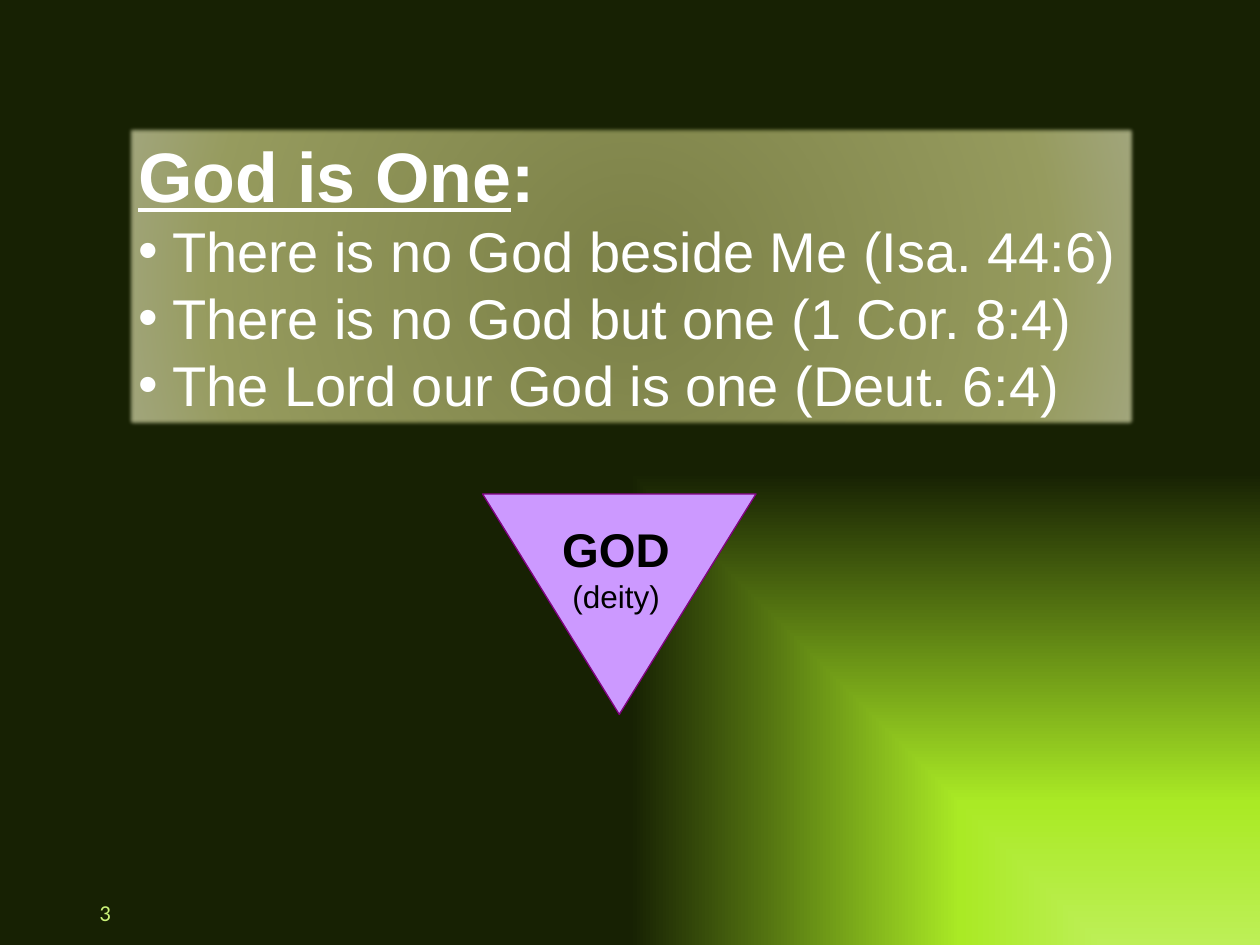
from dataclasses import dataclass

from lxml import etree
from pptx import Presentation
from pptx import util as u
from pptx.dml import color
from pptx.enum import shapes, text
from pptx.oxml import ns

HUES = {
    "lilac": "CC99FF", "plum": "800080", "black": "000000",
    "white": "FFFFFF", "lime": "CAF278",
}
GLOW = [(0, "BDEF57"), (30, "AAEA25"), (100, "172103")]
OLIVE = [(0, "7B8047"), (80, "969B5E"), (100, "A2A67E")]


@dataclass
class Run:
    words: str
    size: float
    hue: str
    face: str = "Arial"
    bold: bool = False
    under: bool = False


@dataclass
class Para:
    runs: list[Run]
    dot: bool = False
    align: text.PP_ALIGN = text.PP_ALIGN.LEFT


def rgb(hue: str) -> color.RGBColor:
    """Look up a named colour."""
    return color.RGBColor.from_string(HUES[hue])


def add(node, tag: str, **attrs):
    """Append a child element with attributes."""
    return etree.SubElement(node, ns.qn(tag), {k: str(v) for k, v in attrs.items()})


def shade(fill, root, stops: list[tuple[int, str]], shape: str, focus: dict[str, int]) -> None:
    """Turn a fill into a gradient that spreads from a focus."""
    fill.gradient()
    grad = root.find(".//" + ns.qn("a:gradFill"))
    for child in list(grad):
        grad.remove(child)
    band = add(grad, "a:gsLst")
    for pos, code in stops:
        add(add(band, "a:gs", pos=pos * 1000), "a:srgbClr", val=code)
    way = add(grad, "a:path", path=shape)
    add(way, "a:fillToRect", **{k: v * 1000 for k, v in focus.items()})


def write(frame, paras: list[Para], **fmt) -> None:
    """Fill a text frame with formatted paragraphs."""
    for key, val in fmt.items():
        setattr(frame, key, val)
    for i, item in enumerate(paras):
        para = frame.add_paragraph() if i else frame.paragraphs[0]
        para.alignment = item.align
        if item.dot:
            props = para._p.get_or_add_pPr()
            props.set("marL", str(u.Inches(0.27)))
            props.set("indent", str(-u.Inches(0.27)))
            add(props, "a:buFont", typeface="Arial")
            add(props, "a:buChar", char="•")
        for part in item.runs:
            run = para.add_run()
            run.text = part.words
            looks = {"name": part.face, "size": u.Pt(part.size),
                     "bold": part.bold, "underline": part.under}
            for key, val in looks.items():
                setattr(run.font, key, val)
            run.font.color.rgb = rgb(part.hue)


def box(*at: float) -> list[u.Length]:
    """Convert a box to lengths."""
    return [u.Inches(n) for n in at]


def wedge(slide) -> None:
    """Draw the inverted triangle and its label."""
    tri = slide.shapes.add_shape(
        shapes.MSO_SHAPE.ISOSCELES_TRIANGLE, *box(3.83, 3.92, 2.17, 1.75))
    tri.rotation = 180
    tri.shadow.inherit = False
    tri.fill.solid()
    tri.fill.fore_color.rgb = rgb("lilac")
    tri.line.color.rgb = rgb("plum")
    tri.line.width = u.Pt(0.75)
    mid = text.PP_ALIGN.CENTER
    label = slide.shapes.add_textbox(*box(4.36, 4.08, 1.06, 0.85))
    write(label.text_frame, [
        Para([Run("GOD", 27, "black", bold=True)], align=mid),
        Para([Run("(deity)", 18, "black")], align=mid),
    ], word_wrap=False)


def panel(slide) -> None:
    """Draw the soft-edged panel of verses."""
    rect = slide.shapes.add_shape(shapes.MSO_SHAPE.RECTANGLE, *box(1, 1, 8.02, 2.39))
    rect.shadow.inherit = False
    glow = rect._element.spPr.find(ns.qn("a:effectLst"))
    add(glow, "a:softEdge", rad=u.Pt(2.5))
    shade(rect.fill, rect._element, OLIVE, "circle", dict.fromkeys("ltrb", 50))
    rect.line.fill.background()
    title = Para([Run("God is One", 40, "white", bold=True, under=True),
                  Run(":", 40, "white", bold=True)])
    verses = [
        "There is no God beside Me (Isa. 44:6)",
        "There is no God but one (1 Cor. 8:4)",
        "The Lord our God is one (Deut. 6:4)",
    ]
    write(rect.text_frame,
          [title] + [Para([Run(v, 32, "white")], dot=True) for v in verses],
          word_wrap=False, vertical_anchor=text.MSO_ANCHOR.TOP)


def folio(slide) -> None:
    """Write the page number."""
    spot = slide.shapes.add_textbox(*box(0.25, 7.12, 1.17, 0.24))
    write(spot.text_frame,
          [Para([Run("3", 13, "lime", "Calibri")], align=text.PP_ALIGN.CENTER)],
          word_wrap=True, vertical_anchor=text.MSO_ANCHOR.MIDDLE)


def main() -> None:
    """Build and save the slide."""
    deck = Presentation()
    deck.slide_width, deck.slide_height = u.Inches(10), u.Inches(7.5)
    slide = deck.slides.add_slide(deck.slide_layouts[6])
    shade(slide.background.fill, slide._element, GLOW, "rect",
          {"l": 100, "t": 100, "r": 0, "b": 0})
    wedge(slide)
    panel(slide)
    folio(slide)
    deck.save("out.pptx")


if __name__ == "__main__":
    main()
